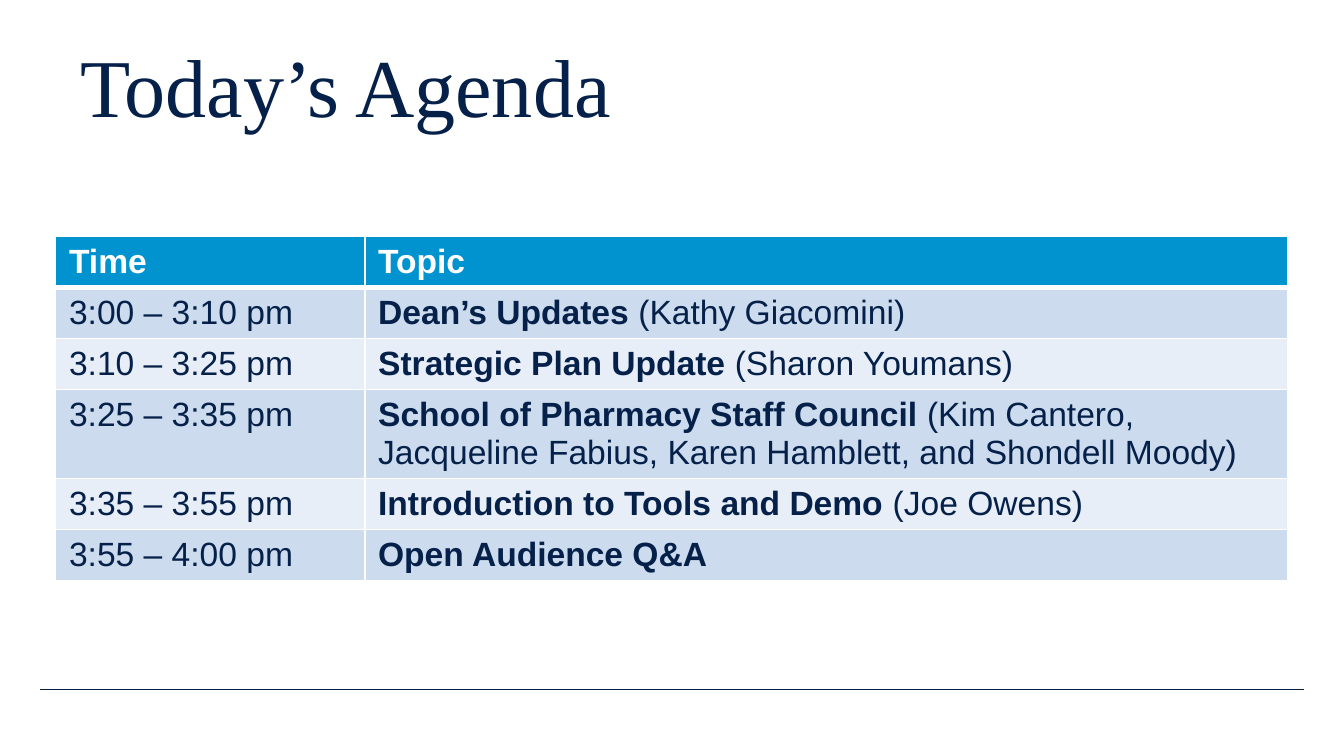
import pptx
import pptx.util
import pptx.dml.color
import pptx.enum.shapes
import pptx.enum.text
import pptx.oxml
import pptx.oxml.ns
from lxml import etree

Pt = pptx.util.Pt
NAVY, BLUE, WHITE = "052049", "0093D0", "FFFFFF"
BANDS = ("CCDCEE", "E7EEF7")

# Content
TITLE = "Today’s Agenda"
HEADER = ("Time", "Topic")
AGENDA = [  # time, topic, speakers
    ("3:00 – 3:10 pm", "Dean’s Updates", "(Kathy Giacomini)"),
    ("3:10 – 3:25 pm", "Strategic Plan Update", "(Sharon Youmans)"),
    ("3:25 – 3:35 pm", "School of Pharmacy Staff Council",
     "(Kim Cantero, Jacqueline Fabius, Karen Hamblett, and Shondell Moody)"),
    ("3:35 – 3:55 pm", "Introduction to Tools and Demo", "(Joe Owens)"),
    ("3:55 – 4:00 pm", "Open Audience Q&A", ""),
]
COL_WIDTHS = (165.6, 494.64)
ROW_HEIGHTS = (27, 27, 27, 47, 27, 27)


def rgb(color):
    return pptx.dml.color.RGBColor.from_string(color)


def add_run(p, text, size, font, color, bold=False):
    r = p.add_run()
    r.text = text
    r.font.size = Pt(size)
    r.font.name = font
    r.font.bold = bold
    r.font.color.rgb = rgb(color)


def set_borders(cell, bottom):
    tc_pr = cell._tc.get_or_add_tcPr()
    widths = {"lnL": 1, "lnR": 1, "lnT": 1, "lnB": bottom}
    for i, (tag, width) in enumerate(widths.items()):
        ln = etree.Element(pptx.oxml.ns.qn("a:" + tag), w=str(Pt(width)))
        fill = etree.SubElement(ln, pptx.oxml.ns.qn("a:solidFill"))
        etree.SubElement(fill, pptx.oxml.ns.qn("a:srgbClr"), val=WHITE)
        tc_pr.insert(i, ln)


def fill_cell(cell, runs, fill, color, bottom=1):
    cell.fill.solid()
    cell.fill.fore_color.rgb = rgb(fill)
    set_borders(cell, bottom)
    for text, bold in runs:
        add_run(cell.text_frame.paragraphs[0], text, 18, "Arial", color, bold)


prs = pptx.Presentation()
prs.slide_width, prs.slide_height = Pt(720), Pt(405)
s = prs.slides.add_slide(prs.slide_layouts[6])

# Footer rule
line = s.shapes.add_connector(pptx.enum.shapes.MSO_CONNECTOR.STRAIGHT,
                              Pt(21.6), Pt(369.4), Pt(698.4), Pt(369.4))
line.line.color.rgb = rgb(NAVY)
line.line.width = Pt(0.25)
etree.SubElement(line._element.spPr, pptx.oxml.ns.qn("a:effectLst"))

# Agenda table
table = s.shapes.add_table(len(ROW_HEIGHTS), len(COL_WIDTHS), Pt(29.8), Pt(126.6),
                           Pt(sum(COL_WIDTHS)), Pt(sum(ROW_HEIGHTS))).table
for col, width in zip(table.columns, COL_WIDTHS):
    col.width = Pt(width)
for row, height in zip(table.rows, ROW_HEIGHTS):
    row.height = Pt(height)
for c, label in enumerate(HEADER):
    fill_cell(table.cell(0, c), [(label, True)], BLUE, WHITE, bottom=3)
for i, (time, topic, speakers) in enumerate(AGENDA):
    band = BANDS[i % 2]
    runs = [(topic + " ", True), (speakers, False)] if speakers else [(topic, True)]
    fill_cell(table.cell(i + 1, 0), [(time, False)], band, NAVY)
    fill_cell(table.cell(i + 1, 1), runs, band, NAVY)
for c in range(len(HEADER)):  # first body row shares the thick header border
    top = table.cell(1, c)._tc.tcPr.find(pptx.oxml.ns.qn("a:lnT"))
    top.set("w", str(Pt(3)))

# Title
tf = s.shapes.add_textbox(Pt(36), Pt(25.2), Pt(610.6), Pt(50.4)).text_frame
tf.word_wrap = True
tf.vertical_anchor = pptx.enum.text.MSO_ANCHOR.BOTTOM
p = tf.paragraphs[0]
p.line_spacing = 0.85
add_run(p, TITLE, 44, "Times New Roman", NAVY)

prs.save("out.pptx")
